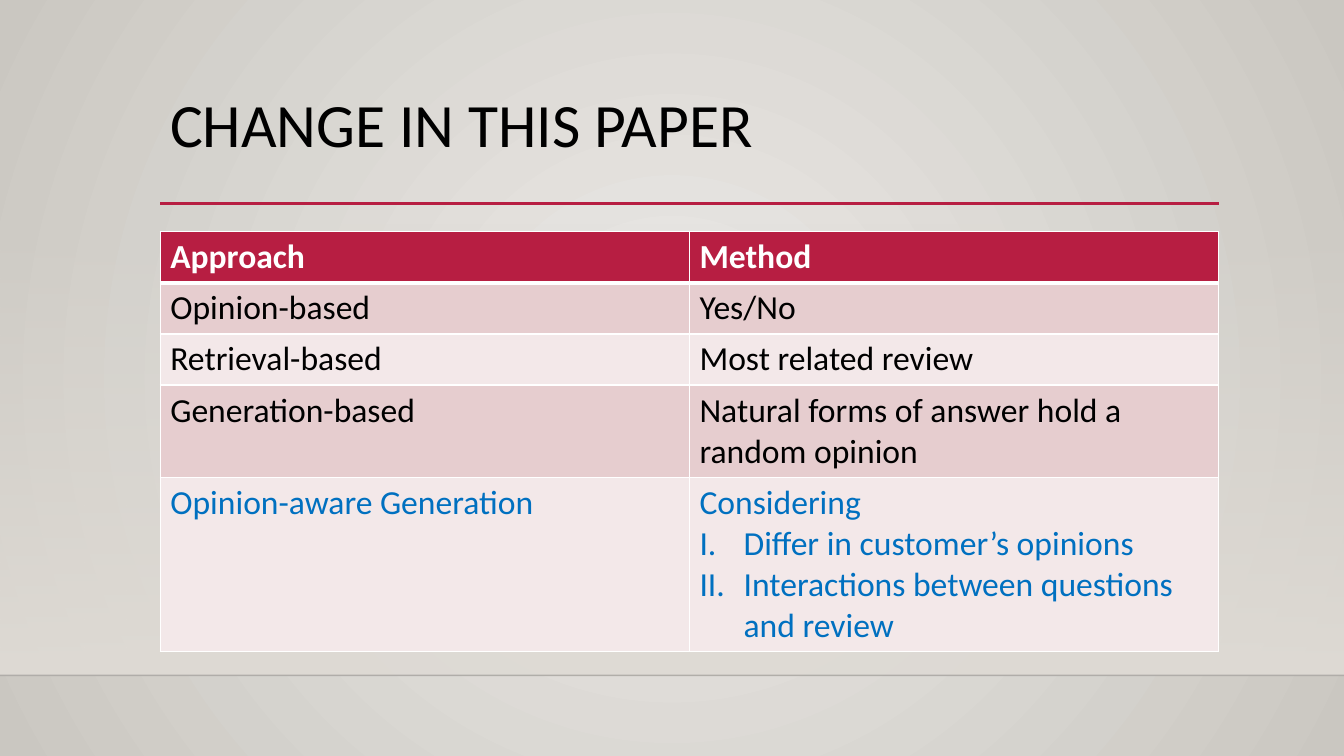
import pptx
import pptx.dml.color
import pptx.enum.shapes
import pptx.enum.text
import pptx.oxml
import pptx.oxml.ns
import pptx.util

Pt = pptx.util.Pt
qn = pptx.oxml.ns.qn
NAMESPACE = pptx.oxml.ns.nsdecls("a")

WIDTH, HEIGHT = 960, 540
LEFT, CONTENT_WIDTH = 114.5, 756
HORIZON = 482.4
CRIMSON, WHITE, BLACK, BLUE = "B71E42", "FFFFFF", "000000", "0070C0"
BANDS = ["E6CDCF", "F3E8E9"]

ROWS = [
    ("Approach", ["Method"]),
    ("Opinion-based", ["Yes/No"]),
    ("Retrieval-based", ["Most related review"]),
    ("Generation-based", ["Natural forms of answer hold a random opinion"]),
    ("Opinion-aware Generation", [
        "Considering",
        "Differ in customer’s opinions",
        "Interactions between questions and review",
    ]),
]
ROW_HEIGHTS = [36.5, 36.5, 36.5, 65.8, 124.4]


def color(value):
    return pptx.dml.color.RGBColor.from_string(value)


def xml(text):
    """Build one drawing element, adding its namespace."""
    tag, rest = text.split(" ", 1)
    return pptx.oxml.parse_xml(f"{tag} {NAMESPACE} {rest}")


class SlideBuilder:
    def __init__(self, slide, font="Calibri"):
        self.slide = slide
        self.font = font

    def gradient(self, fill, colors):
        fill.gradient()
        for stop, value in zip(fill.gradient_stops, colors):
            stop.color.rgb = color(value)

    def set_alpha(self, element, percent):
        first_color = next(element.iter(qn("a:srgbClr")))
        first_color.append(xml(f'<a:alpha val="{percent * 1000}"/>'))

    def background(self, center, edge):
        self.gradient(self.slide.background.fill, [center, edge])
        gradient = next(self.slide.element.iter(qn("a:gradFill")))
        linear = gradient.find(qn("a:lin"))
        gradient.replace(linear, xml(
            '<a:path path="circle">'
            '<a:fillToRect l="50000" t="50000" r="50000" b="50000"/></a:path>'))

    def fading_band(self, top, height, value):
        shape = self.slide.shapes.add_shape(
            pptx.enum.shapes.MSO_SHAPE.RECTANGLE, 0, Pt(top), Pt(WIDTH), Pt(height))
        shape.shadow.inherit = False
        shape.line.fill.background()
        self.gradient(shape.fill, [value, value])
        shape.fill.gradient_angle = 270
        self.set_alpha(shape.element.spPr, 0)

    def rule(self, left, top, width, value, weight, opacity=100):
        line = self.slide.shapes.add_connector(
            pptx.enum.shapes.MSO_CONNECTOR.STRAIGHT,
            Pt(left), Pt(top), Pt(left + width), Pt(top))
        line.line.color.rgb = color(value)
        line.line.width = Pt(weight)
        if opacity < 100:
            self.set_alpha(line.element.spPr, opacity)
        line.element.spPr.append(xml("<a:effectLst />"))

    def fill_paragraph(self, paragraph, text, **style):
        paragraph.text = text
        font_format = {"name": self.font, "bold": False, **style}
        font_format["size"] = Pt(font_format["size"])
        value = font_format.pop("color")
        font = paragraph.runs[0].font
        for name, setting in font_format.items():
            setattr(font, name, setting)
        font.color.rgb = color(value)

    def title(self, text, left, top, width, height):
        box = self.slide.shapes.add_textbox(Pt(left), Pt(top), Pt(width), Pt(height))
        frame = box.text_frame
        frame.word_wrap = True
        frame.vertical_anchor = pptx.enum.text.MSO_ANCHOR.TOP
        frame.paragraphs[0].line_spacing = 0.9
        self.fill_paragraph(frame.paragraphs[0], text, size=44, color=BLACK)

    def cell(self, cell, lines, fill, bottom_weight, **style):
        cell.fill.solid()
        cell.fill.fore_color.rgb = color(fill)
        properties = cell._tc.get_or_add_tcPr()
        weights = {"L": 1, "R": 1, "T": 1, "B": bottom_weight}
        for index, (side, weight) in enumerate(weights.items()):
            properties.insert(index, xml(
                f'<a:ln{side} w="{Pt(weight)}"><a:solidFill>'
                f'<a:srgbClr val="{WHITE}"/></a:solidFill></a:ln{side}>'))
        # Lines after the first form a numbered list
        for index, text in enumerate(lines):
            frame = cell.text_frame
            paragraph = frame.add_paragraph() if index else frame.paragraphs[0]
            if index:
                numbering = paragraph._p.get_or_add_pPr()
                numbering.set("marL", str(Pt(31.5)))
                numbering.set("indent", str(-Pt(31.5)))
                numbering.append(xml('<a:buAutoNum type="romanUcPeriod"/>'))
            self.fill_paragraph(paragraph, text, size=24, **style)

    def table(self, rows, heights, left, top, width):
        table = self.slide.shapes.add_table(
            len(rows), 2, Pt(left), Pt(top), Pt(width), Pt(sum(heights))).table
        for column in table.columns:
            column.width = Pt(width / 2)
        for index, (approach, method) in enumerate(rows):
            table.rows[index].height = Pt(heights[index])
            header, last = index == 0, index == len(rows) - 1
            fill = CRIMSON if header else BANDS[(index - 1) % 2]
            text_color = WHITE if header else BLUE if last else BLACK
            for column, lines in enumerate([[approach], method]):
                self.cell(table.cell(index, column), lines, fill,
                          3 if header else 1, color=text_color, bold=header)


def main():
    presentation = pptx.Presentation()
    presentation.slide_width, presentation.slide_height = Pt(WIDTH), Pt(HEIGHT)
    builder = SlideBuilder(presentation.slides.add_slide(presentation.slide_layouts[6]))

    # Backdrop with its horizon
    builder.background("ECEAE7", "CAC7C1")
    builder.fading_band(159, HORIZON - 159, "DFDBD5")
    builder.rule(0, HORIZON, WIDTH, "000001", 1, opacity=20)

    # Title and underline
    builder.rule(LEFT, 145.2, CONTENT_WIDTH, CRIMSON, 2.5)
    builder.title("CHANGE IN THIS PAPER", LEFT, 63.5, CONTENT_WIDTH, 82.5)

    # Comparison of approaches
    builder.table(ROWS, ROW_HEIGHTS, LEFT, 165.6, CONTENT_WIDTH)

    presentation.save("out.pptx")


if __name__ == "__main__":
    main()
